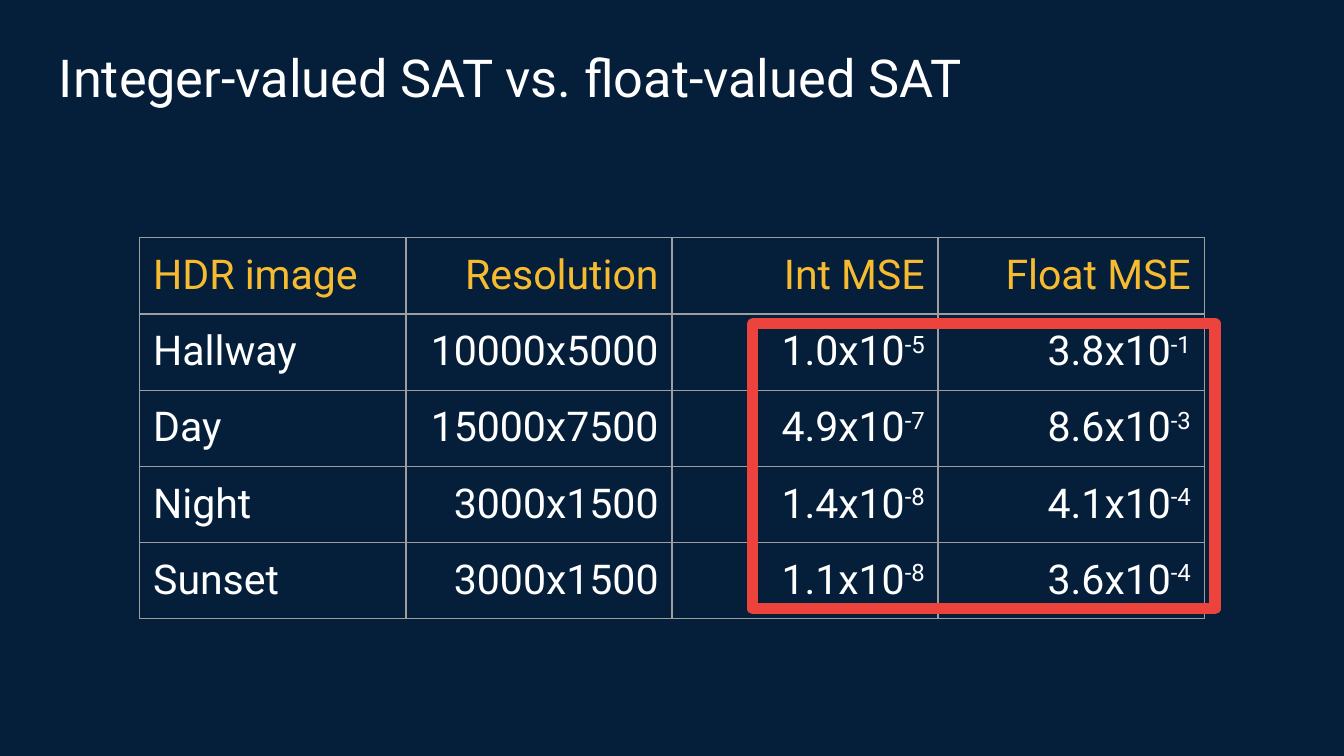
"""Build a slide comparing the errors of integer and float summed-area tables."""
import pptx
import pptx.dml.color
import pptx.enum.shapes
import pptx.enum.text
import pptx.oxml
import pptx.oxml.ns
import pptx.util

inch = pptx.util.Inches
hues = {"back": "051F3B", "text": "FFFFFF", "head": "F7BB30", "grid": "9E9E9E", "frame": "EC443D"}
rows = [
    ["HDR image", "Resolution", "Int MSE", "Float MSE"],
    ["Hallway", "10000x5000", "1.0x10^-5", "3.8x10^-1"],
    ["Day", "15000x7500", "4.9x10^-7", "8.6x10^-3"],
    ["Night", "3000x1500", "1.4x10^-8", "4.1x10^-4"],
    ["Sunset", "3000x1500", "1.1x10^-8", "3.6x10^-4"],
]
left, top, wide, high = 1.04, 1.77, 1.98, 0.42


def tint(name):
    return pptx.dml.color.RGBColor.from_string(hues[name])


def style(para, size, name):
    para.font.name = "Roboto"
    para.font.size = pptx.util.Pt(size)
    para.font.color.rgb = tint(name)


deck = pptx.Presentation()
deck.slide_width = inch(10)
deck.slide_height = deck.slide_width * 9 // 16
slide = deck.slides.add_slide(deck.slide_layouts[6])
slide.background.fill.solid()
slide.background.fill.fore_color.rgb = tint("back")

title = slide.shapes.add_textbox(inch(0.34), inch(0.24), inch(9.32), inch(0.63)).text_frame
title.word_wrap = True
title.margin_left = title.margin_right = title.margin_top = title.margin_bottom = inch(0.1)
title.text = "Integer-valued SAT vs. float-valued SAT"
style(title.paragraphs[0], 28, "text")

table = slide.shapes.add_table(
    len(rows), len(rows[0]), inch(left), inch(top),
    inch(wide * len(rows[0])), inch(high * len(rows)),
).table
table.first_row = table.horz_banding = False
for r, row in enumerate(rows):
    for c, words in enumerate(row):
        cell = table.cell(r, c)
        cell.margin_left = cell.margin_right = cell.margin_top = cell.margin_bottom = inch(0.1)
        cell.fill.background()
        para = cell.text_frame.paragraphs[0]
        style(para, 22, "text" if r else "head")
        if c:
            para.alignment = pptx.enum.text.PP_ALIGN.RIGHT
        base, mark, power = words.partition("^")
        para.add_run().text = base
        if mark:
            run = para.add_run()
            run.text = power
            run.font._element.set("baseline", "30000")
        props = cell._tc.get_or_add_tcPr()
        for i, side in enumerate("LRTB"):
            props.insert(i, pptx.oxml.parse_xml(
                f'<a:ln{side} {pptx.oxml.ns.nsdecls("a")} w="{pptx.util.Pt(0.75)}">'
                f'<a:solidFill><a:srgbClr val="{hues["grid"]}"/></a:solidFill></a:ln{side}>'
            ))

frame = slide.shapes.add_shape(
    pptx.enum.shapes.MSO_SHAPE.RECTANGLE, inch(5.6), inch(2.41), inch(3.44), inch(2.12)
)
frame.shadow.inherit = False
frame.fill.background()
frame.line.color.rgb = tint("frame")
frame.line.width = pptx.util.Pt(6)
frame.line._ln.append(pptx.oxml.parse_xml(f'<a:round {pptx.oxml.ns.nsdecls("a")}/>'))

deck.save("out.pptx")
